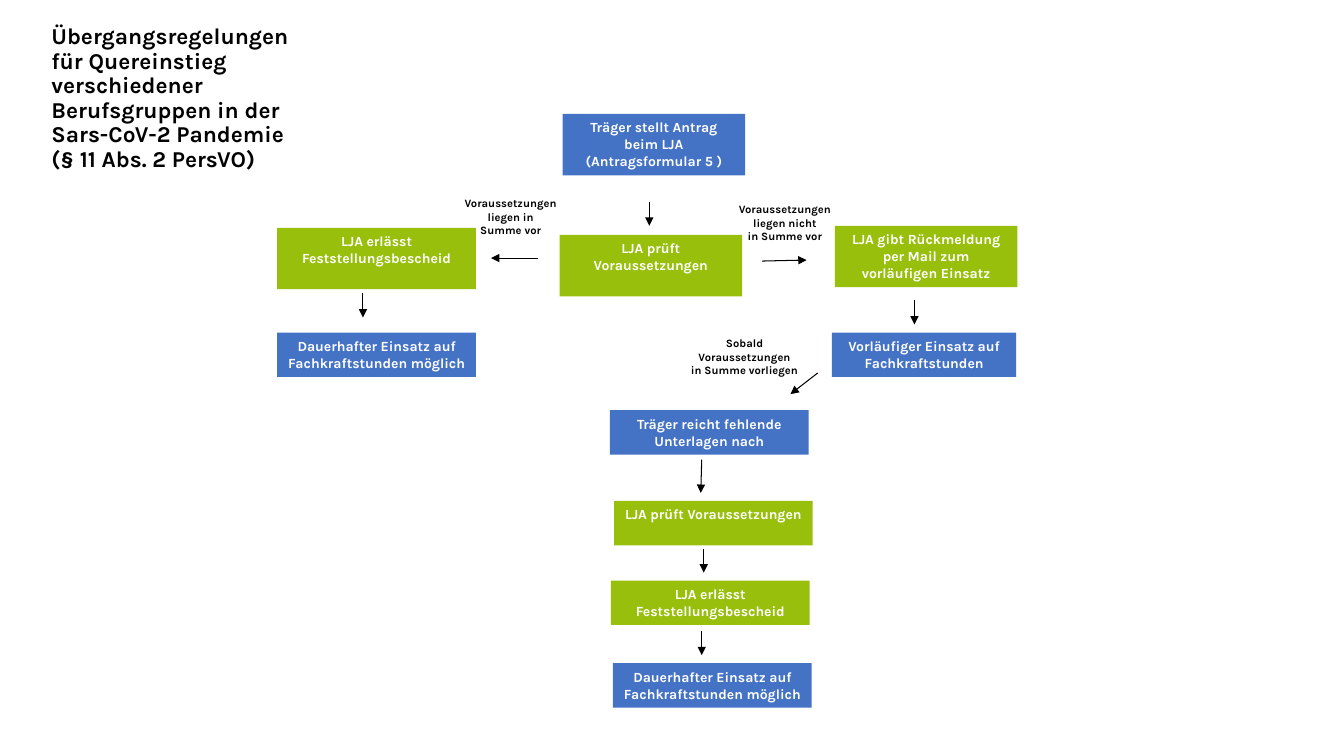
from dataclasses import dataclass

from lxml.etree import SubElement
from pptx import Presentation
from pptx.dml.color import RGBColor
from pptx.enum.shapes import MSO_CONNECTOR, MSO_SHAPE
from pptx.enum.text import MSO_ANCHOR, PP_ALIGN
from pptx.oxml.ns import qn
from pptx.slide import Slide
from pptx.text.text import TextFrame
from pptx.util import Inches, Length, Pt

CELL = 0.1
COLUMNS, ROWS = 133.3, 75
FONT = "Karla"
BLUE, GREEN, BLACK, WHITE = "4472C4", "98BF0C", "000000", "FFFFFF"
WIDE, NARROW = 19.7, 18.1
TALL, LOW = 6.1, 4.4
LABEL_WIDTH, LABEL_HEIGHT = 14.5, 5

TITLE = (
    "Übergangsregelungen für Quereinstieg verschiedener Berufsgruppen "
    "in der Sars-CoV-2 Pandemie\n(§ 11 Abs. 2 PersVO)"
)


@dataclass(frozen=True)
class Step:
    """A coloured box of the flow, placed in grid columns and rows."""

    text: str
    fill: str
    column: float
    row: float
    width: float = WIDE
    height: float = LOW


@dataclass(frozen=True)
class Label:
    """A condition written beside an arrow."""

    text: str
    column: float
    row: float


@dataclass(frozen=True)
class Arrow:
    """An arrow between two grid points."""

    start: tuple[float, float]
    end: tuple[float, float]


STEPS = [
    Step("Träger stellt Antrag beim LJA\n(Antragsformular 5 )", BLUE, 55.8, 11.3, NARROW, TALL),
    Step("LJA prüft Voraussetzungen", GREEN, 55.5, 23.3, NARROW, TALL),
    Step("LJA erlässt Feststellungsbescheid", GREEN, 27.5, 22.6, WIDE, TALL),
    Step("Dauerhafter Einsatz auf Fachkraftstunden möglich", BLUE, 27.5, 33),
    Step("LJA gibt Rückmeldung per Mail zum vorläufigen Einsatz", GREEN, 82.8, 22.4, NARROW, TALL),
    Step("Vorläufiger Einsatz auf Fachkraftstunden", BLUE, 82.5, 33, 18.3),
    Step("Träger reicht fehlende Unterlagen nach", BLUE, 60.5, 40.7),
    Step("LJA prüft Voraussetzungen", GREEN, 60.9, 49.7),
    Step("LJA erlässt Feststellungsbescheid", GREEN, 60.6, 57.6),
    Step("Dauerhafter Einsatz auf Fachkraftstunden möglich", BLUE, 60.8, 65.8),
]

LABELS = [
    Label("Voraussetzungen liegen in\nSumme vor", 43.4, 19),
    Label("Voraussetzungen liegen nicht\nin Summe vor", 70.6, 19.6),
    Label("Sobald Voraussetzungen\nin Summe vorliegen", 66.6, 32.9),
]

ARROWS = [
    Arrow((64.4, 20), (64.4, 22.4)),
    Arrow((53.4, 25.6), (48.7, 25.6)),
    Arrow((75.6, 25.9), (80, 25.8)),
    Arrow((36, 29.1), (36, 31.5)),
    Arrow((90.7, 29.8), (90.7, 32.2)),
    Arrow((81.1, 37), (78.4, 39.1)),
    Arrow((69.6, 45.6), (69.5, 48.9)),
    Arrow((69.8, 54.5), (69.8, 56.8)),
    Arrow((69.6, 62.6), (69.6, 65)),
]


def grid(cells: float) -> Length:
    """Turn a number of grid cells into a length."""
    return Inches(cells * CELL)


def color(value: str) -> RGBColor:
    """Turn a hex string into a colour."""
    return RGBColor.from_string(value)


def write(frame: TextFrame, text: str, size: float, ink: str, align: PP_ALIGN) -> None:
    """Fill a text frame with bold, wrapped text."""
    frame.word_wrap = True
    frame.text = text
    for para in frame.paragraphs:
        para.alignment = align
        for span in para.runs:
            span.font.name = FONT
            span.font.size = Pt(size)
            span.font.bold = True
            span.font.color.rgb = color(ink)


def write_title(page: Slide) -> None:
    """Place and format the title."""
    title = page.shapes.title
    title.left, title.top = grid(4.1), grid(2.4)
    title.width, title.height = grid(27.7), grid(14.8)
    frame = title.text_frame
    write(frame, TITLE, 16.2, BLACK, PP_ALIGN.LEFT)
    frame.vertical_anchor = MSO_ANCHOR.MIDDLE
    for para in frame.paragraphs:
        para.line_spacing = 0.9


def draw_step(page: Slide, step: Step) -> None:
    """Draw one box of the flow."""
    box = page.shapes.add_shape(
        MSO_SHAPE.RECTANGLE, grid(step.column), grid(step.row), grid(step.width), grid(step.height)
    )
    box.shadow.inherit = False
    box.fill.solid()
    box.fill.fore_color.rgb = color(step.fill)
    box.line.fill.background()
    box.text_frame.vertical_anchor = MSO_ANCHOR.TOP
    write(box.text_frame, step.text, 10, WHITE, PP_ALIGN.CENTER)


def draw_label(page: Slide, label: Label) -> None:
    """Write one condition."""
    box = page.shapes.add_textbox(
        grid(label.column), grid(label.row), grid(LABEL_WIDTH), grid(LABEL_HEIGHT)
    )
    write(box.text_frame, label.text, 8, BLACK, PP_ALIGN.CENTER)


def draw_arrow(page: Slide, arrow: Arrow) -> None:
    """Draw one thin arrow with a triangular head."""
    points = [grid(cells) for cells in (*arrow.start, *arrow.end)]
    connector = page.shapes.add_connector(MSO_CONNECTOR.STRAIGHT, *points)
    connector.line.color.rgb = color(BLACK)
    connector.line.width = Pt(0.75)
    SubElement(connector.line._get_or_add_ln(), qn("a:tailEnd"), type="triangle")
    SubElement(connector._element.spPr, qn("a:effectLst"))


def main() -> None:
    """Build the slide and save it."""
    deck = Presentation()
    deck.slide_width, deck.slide_height = grid(COLUMNS), grid(ROWS)
    page = deck.slides.add_slide(deck.slide_layouts[5])
    write_title(page)
    for step in STEPS:
        draw_step(page, step)
    for label in LABELS:
        draw_label(page, label)
    for arrow in ARROWS:
        draw_arrow(page, arrow)
    deck.save("out.pptx")


if __name__ == "__main__":
    main()
